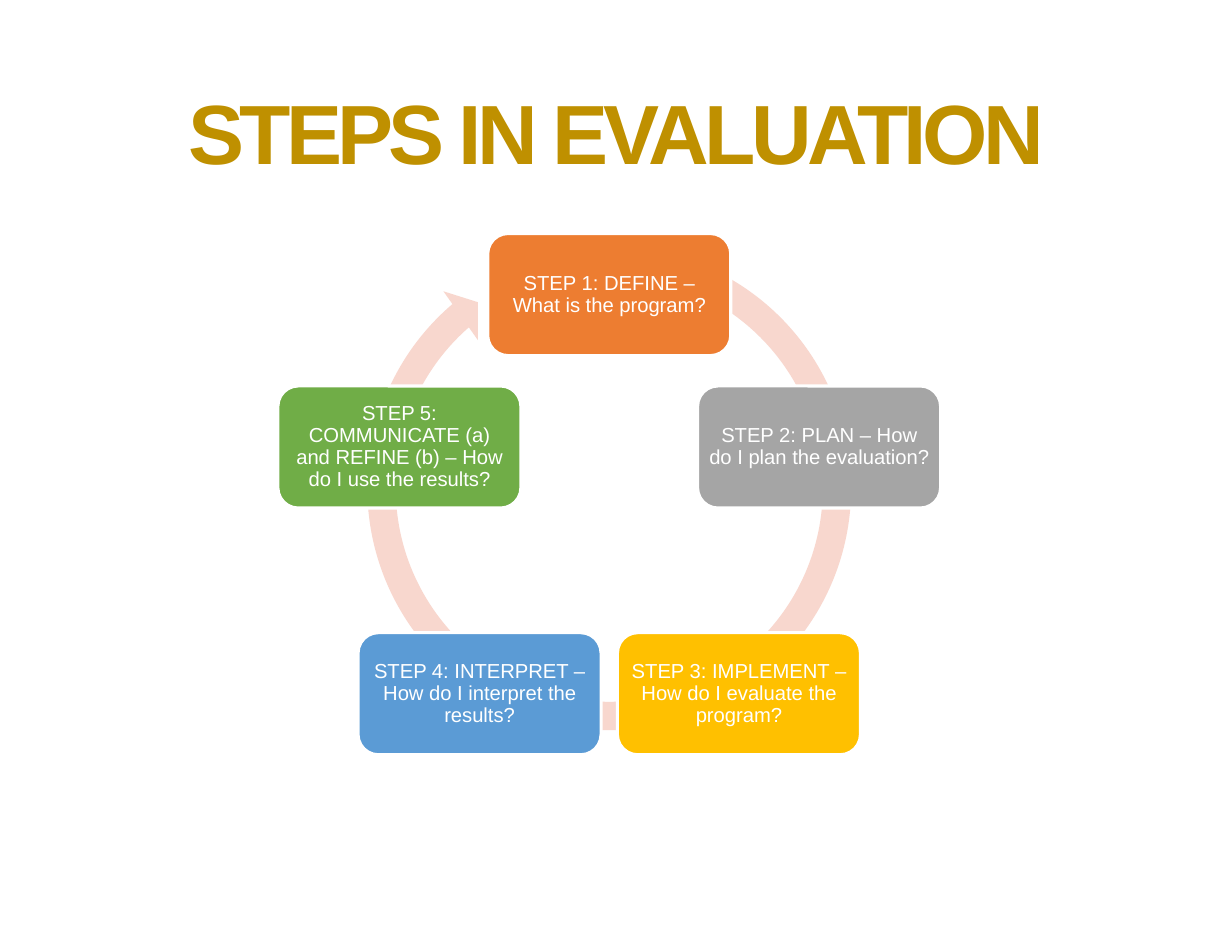
"""Build the slide that shows the five steps in evaluation as a cycle."""
from math import cos, radians, sin

from pptx import Presentation
from pptx.dml.color import RGBColor as RGB
from pptx.enum.shapes import MSO_SHAPE as Shape
from pptx.enum.text import MSO_ANCHOR as Anchor, PP_ALIGN as Align
from pptx.util import Inches, Pt

WHITE = RGB(0xFF, 0xFF, 0xFF)
GOLD = RGB(0xBF, 0x90, 0x00)
PINK = RGB(0xF8, 0xD7, 0xCE)
ORANGE = RGB(0xED, 0x7D, 0x31)
GRAY = RGB(0xA5, 0xA5, 0xA5)
AMBER = RGB(0xFF, 0xC0, 0x00)
BLUE = RGB(0x5B, 0x9B, 0xD5)
GREEN = RGB(0x70, 0xAD, 0x47)

STEPS = [
    ("STEP 1: DEFINE – What is the program?", ORANGE),
    ("STEP 2: PLAN – How do I plan the evaluation?", GRAY),
    ("STEP 3: IMPLEMENT – How do I evaluate the program?", AMBER),
    ("STEP 4: INTERPRET – How do I interpret the results?", BLUE),
    ("STEP 5: COMMUNICATE (a) and REFINE (b) – How do I use the results?", GREEN),
]
MID_X, MID_Y, RADIUS = 5.44, 4.6, 1.97
STEP_W, STEP_H = 2.17, 1.09


def write(shape, words, size, color, bold=False, inset=0.1, lead=1.0, track=0):
    """Put centred text into a shape."""
    frame = shape.text_frame
    frame.word_wrap = True
    frame.vertical_anchor = Anchor.MIDDLE
    frame.margin_left = frame.margin_right = Inches(inset)
    frame.margin_top = frame.margin_bottom = Inches(0.05)
    para = frame.paragraphs[0]
    para.alignment = Align.CENTER
    para.line_spacing = lead
    run = para.add_run()
    run.text = words
    font = run.font
    font.name, font.size, font.bold = "Arial", Pt(size), bold
    font.color.rgb = color
    if track:
        run._r.get_or_add_rPr().set("spc", str(track * 100))


def add_title(slide, words):
    """Add the slide title."""
    box = slide.shapes.add_textbox(Inches(1.25), Inches(0.54), Inches(8.5), Inches(1.25))
    write(box, words, size=54, color=GOLD, bold=True, track=-3)


def add_form(slide, kind, left, top, width, height, fill):
    """Add a filled preset shape without shadow or outline."""
    form = slide.shapes.add_shape(
        kind, Inches(left), Inches(top), Inches(width), Inches(height))
    form.shadow.inherit = False
    form.fill.solid()
    form.fill.fore_color.rgb = fill
    form.line.fill.background()
    return form


def add_ring(slide):
    """Add the round arrow behind the steps."""
    ring = add_form(slide, Shape.CIRCULAR_ARROW, 3.14, 2.06, 4.6, 4.6, PINK)
    for spot, value in enumerate((0.055, 3.31, 137.56, 173.98, 0.058)):
        ring.adjustments[spot] = value


def add_step(slide, angle, words, fill):
    """Add one step at an angle clockwise from the top of the cycle."""
    left = MID_X + RADIUS * sin(angle) - STEP_W / 2
    top = MID_Y - RADIUS * cos(angle) - STEP_H / 2
    step = add_form(slide, Shape.ROUNDED_RECTANGLE, left, top, STEP_W, STEP_H, fill)
    step.line.color.rgb = WHITE
    step.line.width = Pt(2)
    write(step, words, size=13, color=WHITE, inset=0.05, lead=0.9)


def main():
    """Build and save the slide."""
    deck = Presentation()
    deck.slide_width, deck.slide_height = Inches(11), Inches(8.5)
    slide = deck.slides.add_slide(deck.slide_layouts[6])
    add_title(slide, "STEPS IN EVALUATION")
    add_ring(slide)
    for turn, (words, fill) in enumerate(STEPS):
        add_step(slide, radians(360 / len(STEPS) * turn), words, fill)
    deck.save("out.pptx")


if __name__ == "__main__":
    main()
